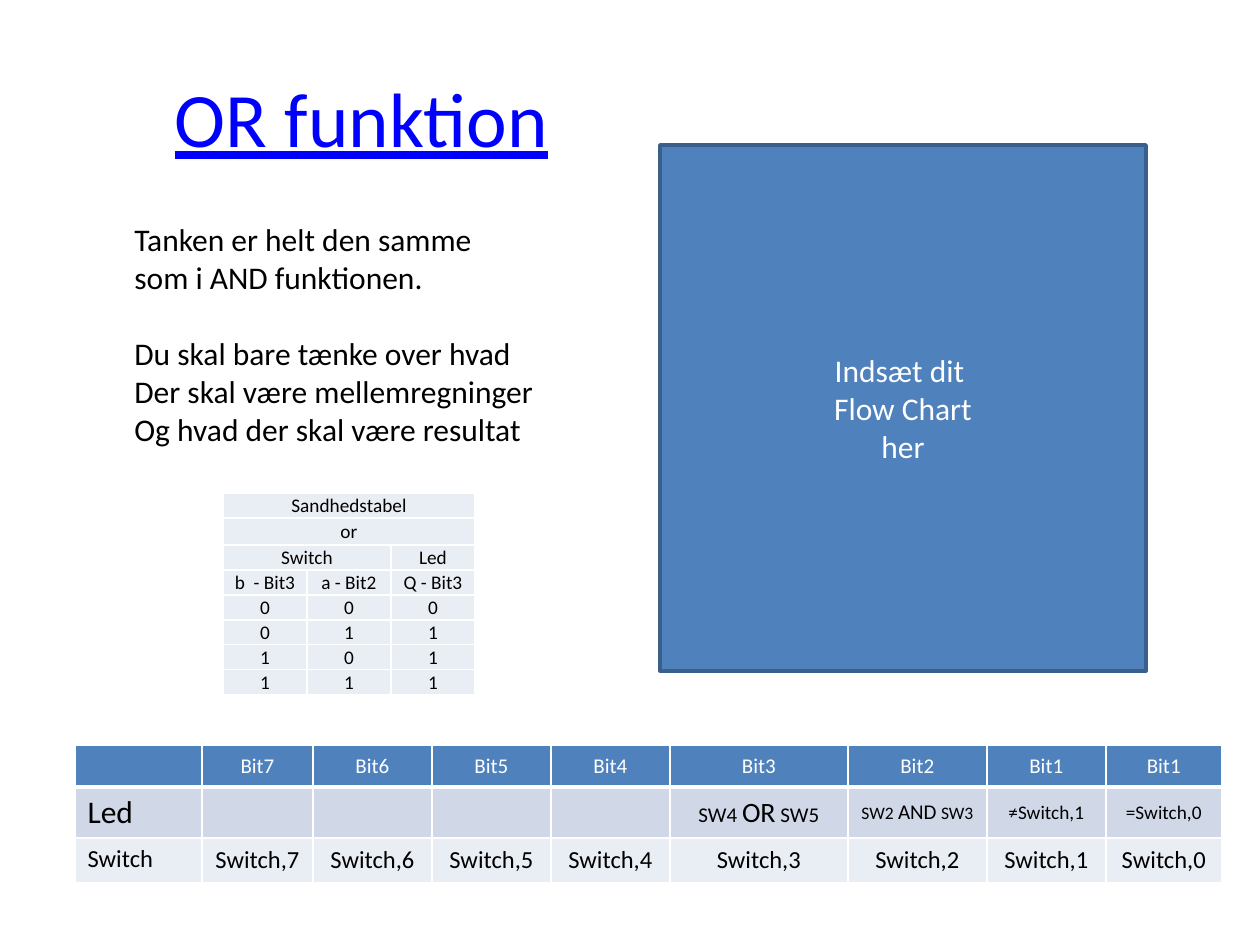
from lxml.etree import SubElement
from pptx import Presentation
from pptx.dml.color import RGBColor
from pptx.enum.shapes import MSO_SHAPE
from pptx.enum.text import MSO_ANCHOR as Anchor, MSO_AUTO_SIZE as AutoSize, PP_ALIGN as Align
from pptx.oxml.ns import qn
from pptx.util import Emu, Pt

EMU_PER_PX = 914400 // 126
FONT = "Calibri"
BLACK, WHITE, LINK_BLUE = "000000", "FFFFFF", "0000FF"
ACCENT, ACCENT_DARK = "4F81BD", "3A5F8C"
BAND_DARK, BAND_LIGHT = "D0D8E8", "E9EDF4"

TITLE = "OR funktion"
EXPLANATION = [
    "Tanken er helt den samme",
    "som i AND funktionen.",
    "Du skal bare tænke over hvad",
    "Der skal være mellemregninger",
    "Og hvad der skal være resultat",
]
SECOND_BLOCK = 2
FLOW_CHART = ["Indsæt dit ", "Flow Chart", "her"]

TRUTH_ROWS = [
    ["Sandhedstabel", None, None],
    ["or", None, None],
    ["Switch", None, "Led"],
    ["b  - Bit3", "a - Bit2", "Q - Bit3"],
    ["0", "0", "0"],
    ["0", "1", "1"],
    ["1", "0", "1"],
    ["1", "1", "1"],
]
TRUTH_COLS = [84] * 3
TRUTH_HEIGHTS = [25, 27] + [25] * 6

# A cell is a string, or a list of (text, size) runs.
BIT_ROWS = [
    [""] + [f"Bit{bit}" for bit in (7, 6, 5, 4, 3, 2, 1, 1)],
    [
        [("Led", 18)], "", "", "", "",
        [("SW4 ", 12), ("OR", 16), (" SW5", 12)],
        [("SW2", 10), (" ", 11), ("AND", 12), (" ", 11), ("SW3", 10)],
        "≠Switch,1", "=Switch,0",
    ],
    ["Switch"] + [f"Switch,{bit}" for bit in range(7, -1, -1)],
]
BIT_COLS = [127, 111, 119, 119, 119, 178, 139, 119, 116]
BIT_HEIGHTS = [42, 50, 45]
BIT_STYLES = [(12, WHITE, ACCENT), (11, BLACK, BAND_DARK), (14, BLACK, BAND_LIGHT)]


def px(length):
    return Emu(length * EMU_PER_PX)


def rgb(hex_colour):
    return RGBColor.from_string(hex_colour)


def write(frame, lines, size=18, colour=BLACK, align=Align.LEFT, underline=None,
          gap_at=None):
    for index, line in enumerate(lines):
        paragraph = frame.paragraphs[0] if index == 0 else frame.add_paragraph()
        paragraph.alignment = align
        if index == gap_at:
            paragraph.space_before = Pt(22)
        if not line:
            # An empty cell takes its height from the end-of-paragraph size.
            paragraph._p.get_or_add_endParaRPr().set("sz", str(size * 100))
            continue
        for text, run_size in [(line, size)] if isinstance(line, str) else line:
            run = paragraph.add_run()
            run.text = text
            run.font.name = FONT
            run.font.size = Pt(run_size)
            run.font.color.rgb = rgb(colour)
            run.font.underline = underline


def border(cell, bottom=1, top=1):
    properties = cell._tc.get_or_add_tcPr()
    for side, width in (("L", 1), ("R", 1), ("T", top), ("B", bottom)):
        line = SubElement(properties, qn(f"a:ln{side}"), w=str(Pt(width)))
        fill = SubElement(line, qn("a:solidFill"))
        SubElement(fill, qn("a:srgbClr"), val=WHITE)


def add_grid(slide, left, top, widths, heights):
    grid = slide.shapes.add_table(
        len(heights), len(widths), px(left), px(top), px(sum(widths)), px(sum(heights))
    ).table
    for column, width in zip(grid.columns, widths):
        column.width = px(width)
    for row, height in zip(grid.rows, heights):
        row.height = px(height)
    return grid


def paint(cell, fill):
    cell.fill.solid()
    cell.fill.fore_color.rgb = rgb(fill)
    cell.vertical_anchor = Anchor.MIDDLE


def add_truth_table(slide):
    grid = add_grid(slide, 223, 493, TRUTH_COLS, TRUTH_HEIGHTS)
    for r, row in enumerate(TRUTH_ROWS):
        for c, text in enumerate(row):
            cell = grid.cell(r, c)
            border(cell)
            paint(cell, BAND_LIGHT)
            cell.margin_left = cell.margin_right = cell.margin_top = px(1)
            cell.margin_bottom = 0
            if text is None:
                continue
            write(cell.text_frame, [text], size=11, align=Align.CENTER)
            last = c
            while last + 1 < len(row) and row[last + 1] is None:
                last += 1
            if last > c:
                cell.merge(grid.cell(r, last))


def add_bit_table(slide):
    grid = add_grid(slide, 75, 745, BIT_COLS, BIT_HEIGHTS)
    for r, (row, (size, colour, fill)) in enumerate(zip(BIT_ROWS, BIT_STYLES)):
        for c, content in enumerate(row):
            cell = grid.cell(r, c)
            border(cell, bottom=3 if r == 0 else 1, top=3 if r == 1 else 1)
            paint(cell, fill)
            if c == 0:
                cell.vertical_anchor = Anchor.TOP
            write(cell.text_frame, [content], size=size, colour=colour,
                  align=Align.CENTER if c else Align.LEFT)


def main():
    deck = Presentation()
    deck.slide_width, deck.slide_height = px(1260), px(945)
    slide = deck.slides.add_slide(deck.slide_layouts[5])

    title = slide.shapes.title
    title.left, title.top, title.width, title.height = map(px, (63, 38, 597, 157))
    title.text_frame.vertical_anchor = Anchor.MIDDLE
    write(title.text_frame, [TITLE], size=44, colour=LINK_BLUE, align=Align.CENTER,
          underline=True)

    add_bit_table(slide)

    explanation = slide.shapes.add_textbox(*map(px, (122, 214, 436, 242))).text_frame
    explanation.word_wrap = False
    explanation.auto_size = AutoSize.SHAPE_TO_FIT_TEXT
    write(explanation, EXPLANATION, gap_at=SECOND_BLOCK)

    flow_chart = slide.shapes.add_shape(
        MSO_SHAPE.RECTANGLE, *map(px, (660, 145, 486, 526)))
    flow_chart.shadow.inherit = False
    flow_chart.fill.solid()
    flow_chart.fill.fore_color.rgb = rgb(ACCENT)
    flow_chart.line.color.rgb = rgb(ACCENT_DARK)
    flow_chart.line.width = Pt(2)
    flow_chart.text_frame.vertical_anchor = Anchor.MIDDLE
    write(flow_chart.text_frame, FLOW_CHART, colour=WHITE, align=Align.CENTER)

    add_truth_table(slide)
    deck.save("out.pptx")


if __name__ == "__main__":
    main()
